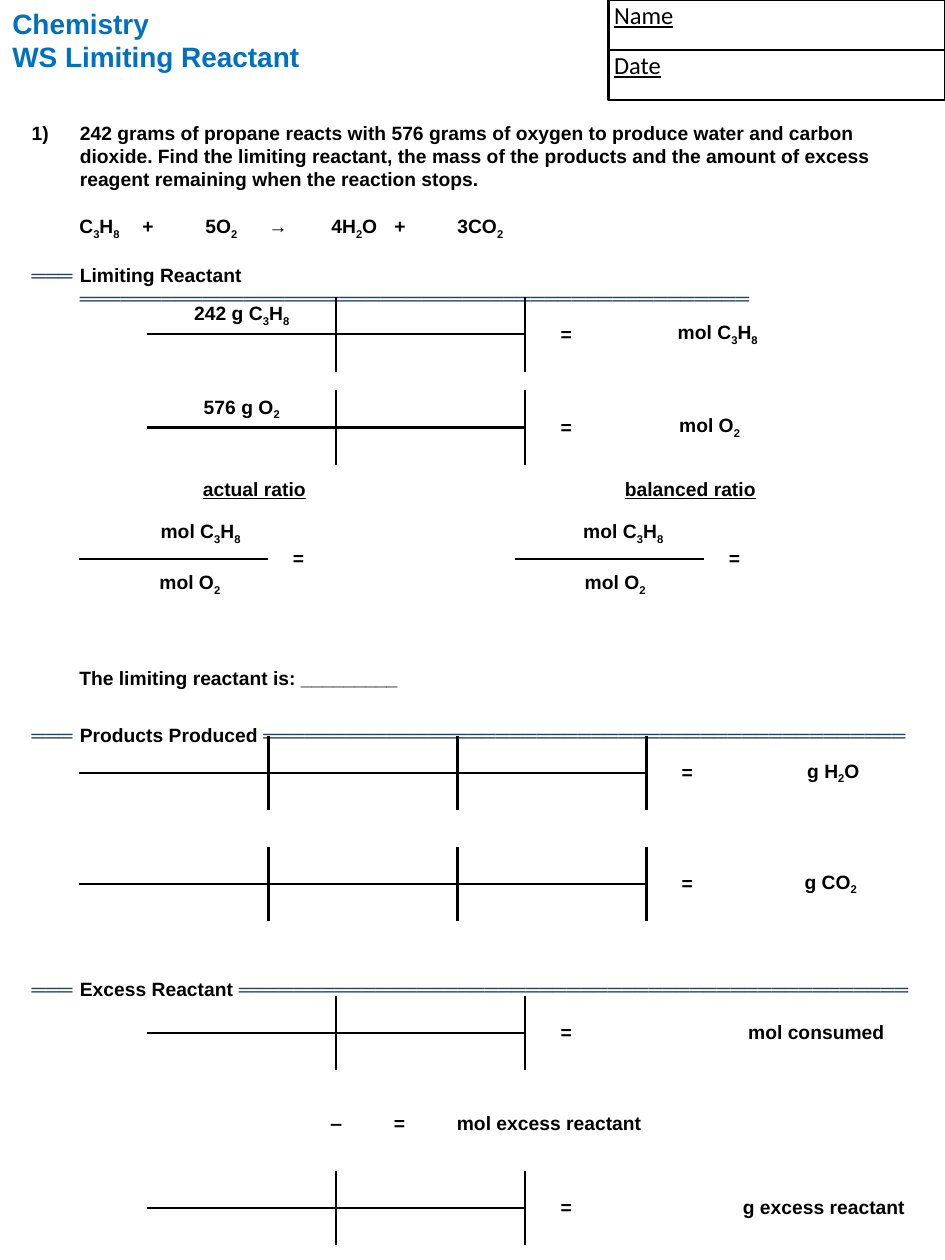
from itertools import groupby
from lxml.etree import SubElement
from pptx import Presentation
from pptx.dml.color import RGBColor
from pptx.enum.shapes import MSO_SHAPE
from pptx.enum.text import MSO_ANCHOR, PP_ALIGN
from pptx.oxml import parse_xml
from pptx.oxml.ns import qn, nsdecls
from pptx.util import Cm, Pt

BLACK = RGBColor(0, 0, 0)
BLUE = RGBColor(0x00, 0x70, 0xC0)
NAVY = RGBColor(0x25, 0x40, 0x61)
SUBS = "₀₁₂₃₄₅₆₇₈₉"
PLAIN = "{2D5ABB26-0587-4C30-8999-92F81FD0307C}"  # no style, no grid
SPACE = 0.108  # one blank at 11 pt, in cm


def write(para, text, size=11, ink=BLACK, face="Arial", bold=True, under=False):
    """Fill a paragraph; lower index digits and tint double rules."""
    font = para.font
    font.name, font.size, font.bold = face, Pt(size), bold
    font.underline = under
    font.color.rgb = ink
    for (sub, rule), part in groupby(text, lambda c: (c in SUBS, c == "═")):
        run = para.add_run()
        run.text = "".join(str(SUBS.index(c)) if sub else c for c in part)
        if sub:
            run._r.get_or_add_rPr().set("baseline", "-25000")
        if rule:
            run.font.bold = False
            run.font.color.rgb = NAVY


def grid(left, top, cols, rows, labels, spans, rules):
    """Add a table: labels by cell, spans as corner pairs, rules as sides."""
    frame = slide.shapes.add_table(len(rows), len(cols), Cm(left), Cm(top),
                                   Cm(sum(cols)), Cm(sum(rows)))
    table = frame.table
    table.first_row = table.horz_banding = False
    table._tbl.tblPr.find(qn("a:tableStyleId")).text = PLAIN
    for col, width in zip(table.columns, cols):
        col.width = Cm(width)
    for row, height in zip(table.rows, rows):
        row.height = Cm(height)
    for r in range(len(rows)):
        for c in range(len(cols)):
            cell = table.cell(r, c)
            cell.fill.background()
            cell.margin_top = cell.margin_bottom = 0
            cell.vertical_anchor = MSO_ANCHOR.MIDDLE
            text, pad, align, under = labels.get((r, c), ("", 0, CENTER, False))
            cell.margin_left = Cm(0.25 + pad * SPACE)
            para = cell.text_frame.paragraphs[0]
            para.alignment = align
            write(para, text, under=under)
            sides = [s for s in "LRTB" if s in rules.get((r, c), "")]
            for i, side in enumerate(sides):
                cell._tc.tcPr.insert(i, parse_xml(
                    f'<a:ln{side} {nsdecls("a")} w="{Pt(1.5)}"><a:solidFill>'
                    f'<a:srgbClr val="{BLACK}"/></a:solidFill></a:ln{side}>'))
    for start, end in spans:
        table.cell(*start).merge(table.cell(*end))


CENTER, LEFT = PP_ALIGN.CENTER, PP_ALIGN.LEFT
deck = Presentation()
deck.slide_width, deck.slide_height = Cm(19.05), Cm(25.4)
slide = deck.slides.add_slide(deck.slide_layouts[6])

# Title
box = slide.shapes.add_textbox(0, 0, Cm(10.85), Cm(1.75))
box.text_frame.word_wrap = True
write(box.text_frame.paragraphs[0], "Chemistry", 16, BLUE)
write(box.text_frame.add_paragraph(), "WS Limiting Reactant", 16, BLUE)

# Name and date fields
for i, word in enumerate(["Name", "Date"]):
    box = slide.shapes.add_shape(MSO_SHAPE.RECTANGLE, Cm(12.27), Cm(i * 1.01),
                                 Cm(6.78), Cm(1.01))
    box.shadow.inherit = False
    box.fill.background()
    box.line.color.rgb = BLACK
    box.line.width = Pt(1.5)
    frame = box.text_frame
    frame.margin_left = Cm(0.11)
    frame.margin_top = frame.margin_right = frame.margin_bottom = 0
    frame.vertical_anchor = MSO_ANCHOR.TOP
    frame.paragraphs[0].alignment = LEFT
    write(frame.paragraphs[0], word, 14, face="Calibri", bold=False, under=True)

# Question, equation, headings and subtraction: left, top, hang, tabs, text
lines = [
    (0.64, 2.44, 0.97, [], "1)\t242 grams of propane reacts with 576 grams of "
     "oxygen to produce water and carbon dioxide. Find the limiting reactant, "
     "the mass of the products and the amount of excess reagent remaining "
     "when the reaction stops."),
    (1.6, 4.33, 0, [1.23, 2, 3.43, 4.31, 5.68, 6.45],
     "C₃H₈\t+\t5O₂\t→\t4H₂O\t+\t3CO₂"),
    (0.64, 5.31, 0.97, [], "═══ \tLimiting Reactant " + "═" * 49),
    (1.6, 13.44, 0, [], "The limiting reactant is: _________"),
    (0.64, 14.58, 0.97, [], "═══\tProducts Produced " + "═" * 47),
    (0.64, 19.71, 0.97, [], "═══ \tExcess Reactant " + "═" * 49),
    (6.67, 22.4, 0, [4.78, 8.59], "‒\t=\tmol excess reactant"),
]
for left, top, hang, tabs, text in lines:
    box = slide.shapes.add_textbox(Cm(left), Cm(top), Cm(18.42 - left), Cm(0.5))
    frame = box.text_frame
    frame.word_wrap = True
    frame.margin_left = frame.margin_right = 0
    frame.margin_top = frame.margin_bottom = 0
    if tabs:
        box.width = Cm(19.05 - left)
    write(frame.paragraphs[0], text)
    props = frame.paragraphs[0]._p.get_or_add_pPr()
    props.set("marL", str(Cm(hang)))
    props.set("indent", str(-Cm(hang)))
    if tabs:
        stops = SubElement(props, qn("a:tabLst"))
        props.insert(0, stops)
        for tab in tabs:
            SubElement(stops, qn("a:tab"), pos=str(Cm(tab)), algn="l")

# Conversion grids: left, top, bars, given, result, pad, align, result width
frames = [
    (2.97, 5.99, 2, "242 g C₃H₈", "mol C₃H₈", 6, CENTER, 3.81),
    (2.97, 7.87, 2, "576 g O₂", "mol O₂", 3, CENTER, 3.81),
    (1.6, 14.83, 3, "", "g H₂O", 4, CENTER, 3.81),
    (1.6, 17.07, 3, "", "g CO₂", 3, CENTER, 3.81),
    (2.97, 20.07, 2, "", "mol consumed", 24, LEFT, 6.35),
    (2.97, 23.6, 2, "", "g excess reactant", 23, LEFT, 6.35),
]
for left, top, bars, given, result, pad, align, wide in frames:
    rules = {(r, c): "BT"[r] + "L" * (c > 0) + "R" * (c < bars - 1)
             for r in range(2) for c in range(bars)}
    labels = {(0, 0): (given, 0, CENTER, False),
              (0, bars): ("=", 0, CENTER, False),
              (0, bars + 1): (result, pad, align, False)}
    spans = [((0, c), (1, c)) for c in (bars, bars + 1)]
    grid(left, top, [3.81] * bars + [1.65, wide], [0.75, 0.75],
         labels, spans, rules)

# Mole ratios: left, heading, pads of the two labels
for left, head, up, down in [(1.6, "actual ratio", 10, 6),
                             (10.39, "balanced ratio", 5, 2)]:
    labels = {(0, 0): (head, 0, CENTER, True),
              (1, 0): ("mol C₃H₈", up, CENTER, False),
              (1, 1): ("=", 0, CENTER, False),
              (2, 0): ("mol O₂", down, CENTER, False)}
    spans = [((0, 0), (0, 2)), ((1, 1), (2, 1)), ((1, 2), (2, 2))]
    grid(left, 9.5, [3.81, 1.22, 2.03], [0.75, 1.02, 1.02],
         labels, spans, {(1, 0): "B", (2, 0): "T"})

deck.save("out.pptx")
